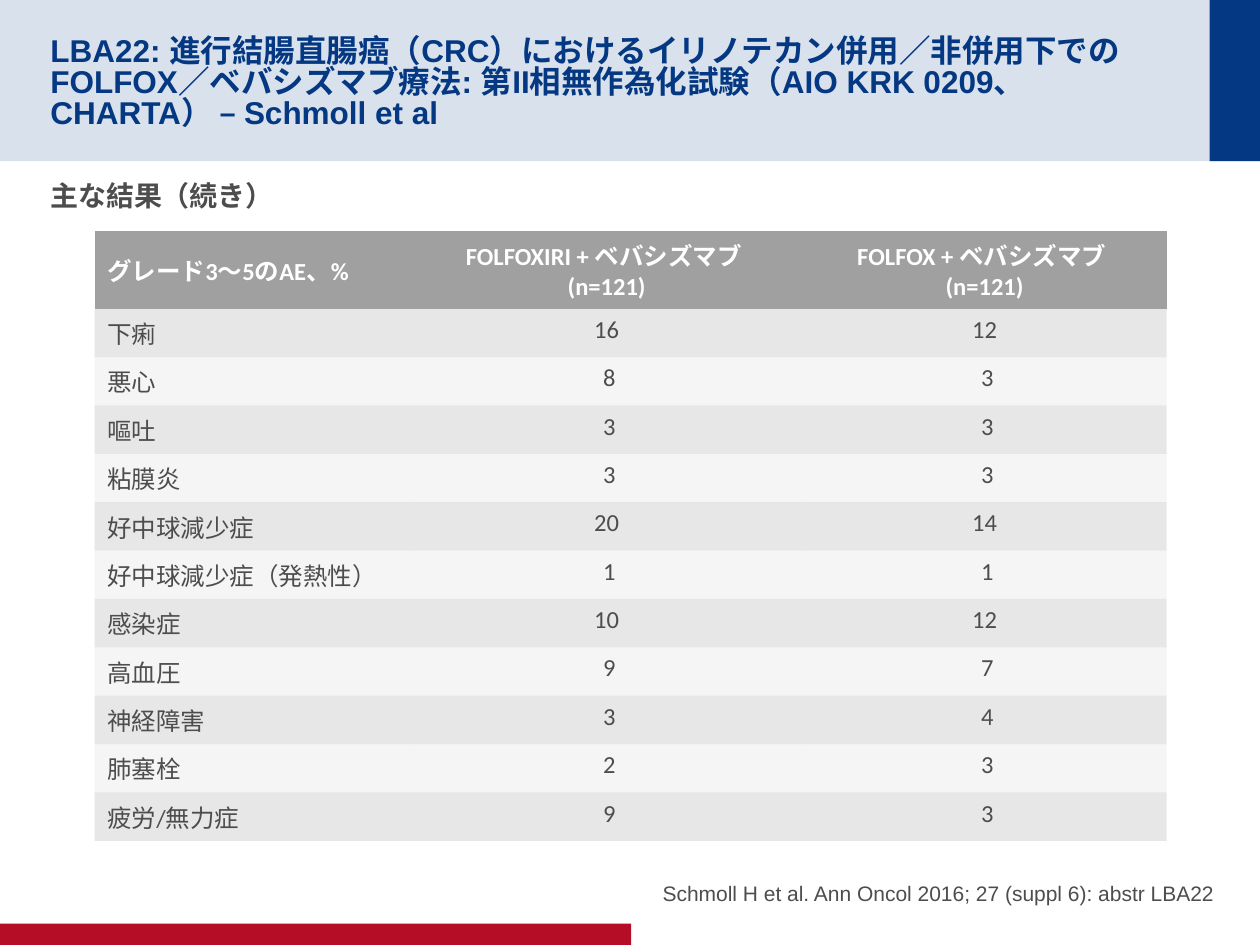
import lxml.etree
import pptx
import pptx.dml.color
import pptx.enum.shapes
import pptx.enum.text
import pptx.oxml.ns
import pptx.util

Inches = pptx.util.Inches
Pt = pptx.util.Pt
ALIGN = pptx.enum.text.PP_ALIGN
ANCHOR = pptx.enum.text.MSO_ANCHOR
qn = pptx.oxml.ns.qn

COLORS = {"navy": "043882", "red": "B60D27", "gray": "A0A0A0",
          "text": "4D4D4D", "white": "FFFFFF"}
NO_GRID_STYLE = "{2D5ABB26-0587-4C30-8999-92F81FD0307C}"


def paint(fill, color, opacity=100):
    fill.solid()
    fill.fore_color.rgb = pptx.dml.color.RGBColor.from_string(COLORS[color])
    if opacity < 100:
        for srgb in fill._xPr.iter(qn("a:srgbClr")):
            lxml.etree.SubElement(srgb, qn("a:alpha"), val=str(opacity * 1000))


def write(paragraph, text, font, size, color, bold, align):
    paragraph.alignment = align
    for number, line in enumerate(text.split("\n")):
        if number:
            paragraph.add_line_break()
        run = paragraph.add_run()
        run.text = line
        run.font.name = font
        run.font.size = Pt(size)
        run.font.bold = bold
        run.font.color.rgb = pptx.dml.color.RGBColor.from_string(COLORS[color])


deck = pptx.Presentation()
deck.slide_width = Inches(10)
deck.slide_height = Inches(7.5)
slide = deck.slides.add_slide(deck.slide_layouts.get_by_name("Comparison"))
placeholders = {p.placeholder_format.idx: p for p in slide.placeholders}
for unused in (2, 4):
    element = placeholders[unused].element
    element.getparent().remove(element)

bands = [
    (0, 0, 10, 1.28, "navy", 15),
    (9.6, 0, 0.4, 1.28, "navy", 100),
    (0, 7.33, 5.01, 0.17, "red", 100),
]
for layer, (left, top, width, height, color, opacity) in enumerate(bands):
    band = slide.shapes.add_shape(
        pptx.enum.shapes.MSO_SHAPE.RECTANGLE,
        Inches(left), Inches(top), Inches(width), Inches(height))
    band.shadow.inherit = False
    band.line.fill.background()
    paint(band.fill, color, opacity)
    slide.shapes._spTree.insert(2 + layer, band.element)

texts = [
    (0, (0.4, 0.2, 9.01, 0.88), (0.05, 0), ANCHOR.MIDDLE, 0.82, 0,
     "LBA22: 進行結腸直腸癌（CRC）におけるイリノテカン併用／非併用下での"
     "FOLFOX／ベバシズマブ療法: 第II相無作為化試験（AIO KRK 0209、CHARTA） – Schmoll et al",
     18, "navy", True, ALIGN.LEFT),
    (1, (0.4, 1.37, 9.2, 5.19), (0.05, 0.05), ANCHOR.TOP, 1, 4,
     "主な結果（続き）", 16, "text", True, ALIGN.LEFT),
    (3, (4.79, 6.66, 4.85, 0.53), (0, 0), ANCHOR.BOTTOM, 1, 4,
     "Schmoll H et al. Ann Oncol 2016; 27 (suppl 6): abstr LBA22",
     12, "text", False, ALIGN.RIGHT),
]
for idx, box, insets, anchor, spacing, after, text, size, color, bold, align in texts:
    holder = placeholders[idx]
    holder.left, holder.top, holder.width, holder.height = map(Inches, box)
    frame = holder.text_frame
    frame.word_wrap = True
    frame.auto_size = pptx.enum.text.MSO_AUTO_SIZE.NONE
    frame.vertical_anchor = anchor
    frame.margin_left = frame.margin_right = 0
    frame.margin_top, frame.margin_bottom = map(Inches, insets)
    paragraph = frame.paragraphs[0]
    paragraph.line_spacing = spacing
    paragraph.space_before = Pt(0)
    paragraph.space_after = Pt(after)
    write(paragraph, text, "Arial", size, color, bold, align)

adverse_events = [
    ("グレード3～5のAE、%", "FOLFOXIRI + ベバシズマブ \n(n=121)", "FOLFOX + ベバシズマブ \n(n=121)"),
    ("下痢", "16", "12"),
    ("悪心", " 8", " 3"),
    ("嘔吐", " 3", " 3"),
    ("粘膜炎", " 3", " 3"),
    ("好中球減少症", "20", "14"),
    ("好中球減少症（発熱性）", " 1", " 1"),
    ("感染症", "10", "12"),
    ("高血圧", " 9", " 7"),
    ("神経障害", " 3", " 4"),
    ("肺塞栓", " 2", " 3"),
    ("疲労/無力症", " 9", " 3"),
]
table = slide.shapes.add_table(
    len(adverse_events), 3, Inches(0.75), Inches(1.83), Inches(8.51), Inches(4.29)).table
table._tbl.tblPr.find(qn("a:tableStyleId")).text = NO_GRID_STYLE
for column, width in zip(table.columns, (2.51, 3.11, 2.89)):
    column.width = Inches(width)
for r, event in enumerate(adverse_events):
    header = r == 0
    table.rows[r].height = Inches(0.48 if header else 0.34)
    opacity = 100 if header else 25 if r % 2 else 10
    for c, text in enumerate(event):
        cell = table.cell(r, c)
        paint(cell.fill, "gray", opacity)
        cell.vertical_anchor = ANCHOR.MIDDLE if header and c == 0 else ANCHOR.TOP
        write(cell.text_frame.paragraphs[0], text, "Calibri", 14,
              "white" if header else "text", header,
              ALIGN.CENTER if c else ALIGN.LEFT)

deck.save("out.pptx")
